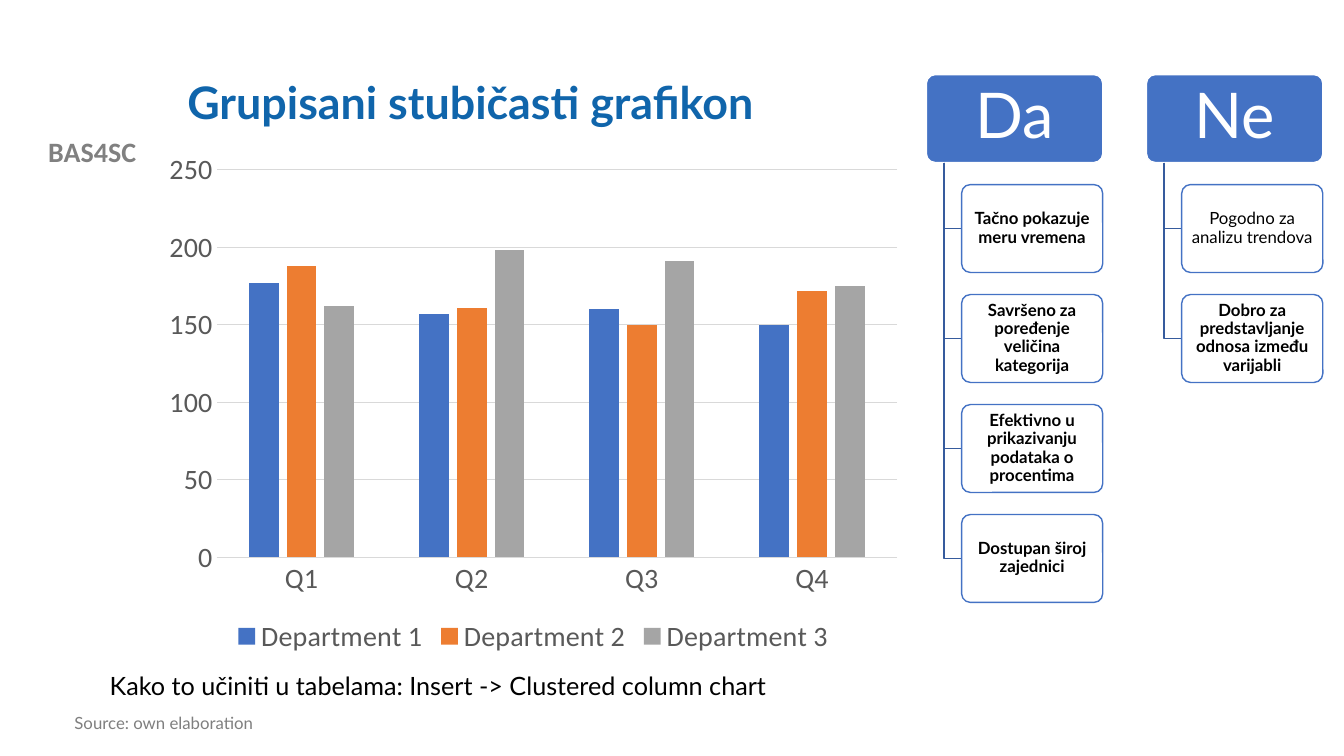
from lxml import etree
from pptx import Presentation
from pptx.chart import data
from pptx.dml import color
from pptx.enum import chart as charts, shapes, text
from pptx.oxml import ns
from pptx.util import Pt

BLUE, GREY, RULE = "4472C4", "595959", "D9D9D9"
QUARTERS = ["Q1", "Q2", "Q3", "Q4"]
DEPARTMENTS = [
    ("Department 1", (177, 157, 160, 150), BLUE),
    ("Department 2", (188, 161, 150, 172), "ED7D31"),
    ("Department 3", (162, 198, 191, 175), "A5A5A5"),
]
COLUMNS = [
    ("Da", [("Tačno pokazuje meru vremena", True),
            ("Savršeno za poređenje veličina kategorija", True),
            ("Efektivno u prikazivanju podataka o procentima", True),
            ("Dostupan široj zajednici", True)]),
    ("Ne", [("Pogodno za analizu trendova", False),
            ("Dobro za predstavljanje odnosa između varijabli", True)]),
]
COLUMN_LEFT, COLUMN_STEP = 661.7, 157.2
CARD_TOP, CARD_STEP, CARD_HEIGHT = 53.3, 78.55, 62.8
HEADER_WIDTH, ITEM_INDENT, STEM_INDENT = 126, 25.2, 12.6


def rgb(value):
    """Turn a hex string into a colour."""
    return color.RGBColor.from_string(value)


def style_font(font, size, ink, name="Lato", bold=False):
    """Set the look of a font."""
    font.size, font.name, font.bold = Pt(size), name, bold
    font.color.rgb = rgb(ink)


def paint(fill, ink):
    """Fill with one solid colour."""
    fill.solid()
    fill.fore_color.rgb = rgb(ink)


def stroke(line, ink, width=1):
    """Set the colour and width of a line."""
    line.color.rgb = rgb(ink)
    line.width = Pt(width)


def add_label(slide, box, words, size, ink, name="Lato", bold=False,
              align=text.PP_ALIGN.LEFT, anchor=text.MSO_ANCHOR.TOP):
    """Add a wrapped line of text."""
    frame = slide.shapes.add_textbox(*map(Pt, box)).text_frame
    frame.word_wrap = True
    frame.vertical_anchor = anchor
    line = frame.paragraphs[0]
    line.text, line.alignment = words, align
    style_font(line.font, size, ink, name, bold)


def add_card(slide, box, words, size, ink, fill, edge, margins, bold=False):
    """Add a rounded card with centred text."""
    card = slide.shapes.add_shape(shapes.MSO_SHAPE.ROUNDED_RECTANGLE, *map(Pt, box))
    card.adjustments[0] = 0.1
    card.shadow.inherit = False
    paint(card.fill, fill)
    stroke(card.line, edge)
    frame = card.text_frame
    frame.word_wrap = True
    frame.vertical_anchor = text.MSO_ANCHOR.MIDDLE
    frame.margin_left = frame.margin_right = Pt(margins[0])
    frame.margin_top = frame.margin_bottom = Pt(margins[1])
    line = frame.paragraphs[0]
    line.text, line.alignment, line.line_spacing = words, text.PP_ALIGN.CENTER, 0.9
    style_font(line.font, size, ink, bold=bold)
    return card


def set_opacity(shape, percent):
    """Make a solid fill partly transparent."""
    ink = shape.fill._xPr.find(ns.qn("a:solidFill"))[0]
    etree.SubElement(ink, ns.qn("a:alpha"), val=str(percent * 1000))


def add_branch(slide, left, top, right, bottom):
    """Draw an elbow from a header down to an item."""
    builder = slide.shapes.build_freeform(Pt(left), Pt(top))
    builder.add_line_segments([(Pt(left), Pt(bottom)), (Pt(right), Pt(bottom))], close=False)
    branch = builder.convert_to_shape()
    branch.shadow.inherit = False
    branch.fill.background()
    stroke(branch.line, "365B9D")


def add_column(slide, left, heading, items):
    """Add a header with its branch of items."""
    add_card(slide, (left, CARD_TOP, HEADER_WIDTH, CARD_HEIGHT), heading, 45,
             "FFFFFF", BLUE, "FFFFFF", (8.6, 6))
    for row, (words, bold) in enumerate(items, 1):
        top = CARD_TOP + row * CARD_STEP
        add_branch(slide, left + STEM_INDENT, CARD_TOP + CARD_HEIGHT,
                   left + ITEM_INDENT, top + CARD_HEIGHT / 2)
        item = add_card(slide, (left + ITEM_INDENT, top, HEADER_WIDTH - ITEM_INDENT, CARD_HEIGHT),
                        words, 12, "000000", "FFFFFF", BLUE, (4, 3.3), bold)
        set_opacity(item, 90)


def add_department_chart(slide, box):
    """Add the clustered columns by quarter."""
    table = data.CategoryChartData()
    table.categories = QUARTERS
    for name, values, _ in DEPARTMENTS:
        table.add_series(name, values)
    chart = slide.shapes.add_chart(charts.XL_CHART_TYPE.COLUMN_CLUSTERED,
                                   *map(Pt, box), table).chart
    style_font(chart.font, 20, GREY, "Calibri")
    chart.has_title = False
    chart.has_legend = True
    chart.legend.position = charts.XL_LEGEND_POSITION.BOTTOM
    chart.legend.include_in_layout = False
    style_font(chart.legend.font, 20, GREY, "Calibri")
    for axis in (chart.category_axis, chart.value_axis):
        axis.major_tick_mark = axis.minor_tick_mark = charts.XL_TICK_MARK.NONE
        style_font(axis.tick_labels.font, 20, GREY, "Calibri")
    stroke(chart.category_axis.format.line, RULE, 0.75)
    amounts = chart.value_axis
    amounts.minimum_scale, amounts.maximum_scale, amounts.major_unit = 0, 250, 50
    amounts.format.line.fill.background()
    stroke(amounts.major_gridlines.format.line, RULE, 0.75)
    plot = chart.plots[0]
    plot.gap_width, plot.overlap, plot.vary_by_categories = 219, -27, False
    for series, (_, _, ink) in zip(plot.series, DEPARTMENTS):
        paint(series.format.fill, ink)


def main():
    """Build and save the slide."""
    deck = Presentation()
    deck.slide_width, deck.slide_height = Pt(960), Pt(540)
    slide = deck.slides.add_slide(deck.slide_layouts[6])
    add_label(slide, (0, 92.2, 131.8, 31.5), "BAS4SC", 20, "808080", "Calibri", True,
              text.PP_ALIGN.CENTER)
    add_label(slide, (126.7, 28.8, 767.5, 87.8), "Grupisani stubičasti grafikon", 32,
              "1065AB", bold=True, anchor=text.MSO_ANCHOR.MIDDLE)
    add_label(slide, (46.1, 505.4, 360.7, 24.5), "Source: own elaboration", 12, "7F7F7F")
    add_department_chart(slide, (110.2, 101.5, 541.4, 369.4))
    for index, (heading, items) in enumerate(COLUMNS):
        add_column(slide, COLUMN_LEFT + index * COLUMN_STEP, heading, items)
    add_label(slide, (71.3, 475.2, 567.4, 30.2),
              "Kako to učiniti u tabelama: Insert -> Clustered column chart", 18, "000000")
    deck.save("out.pptx")


if __name__ == "__main__":
    main()
